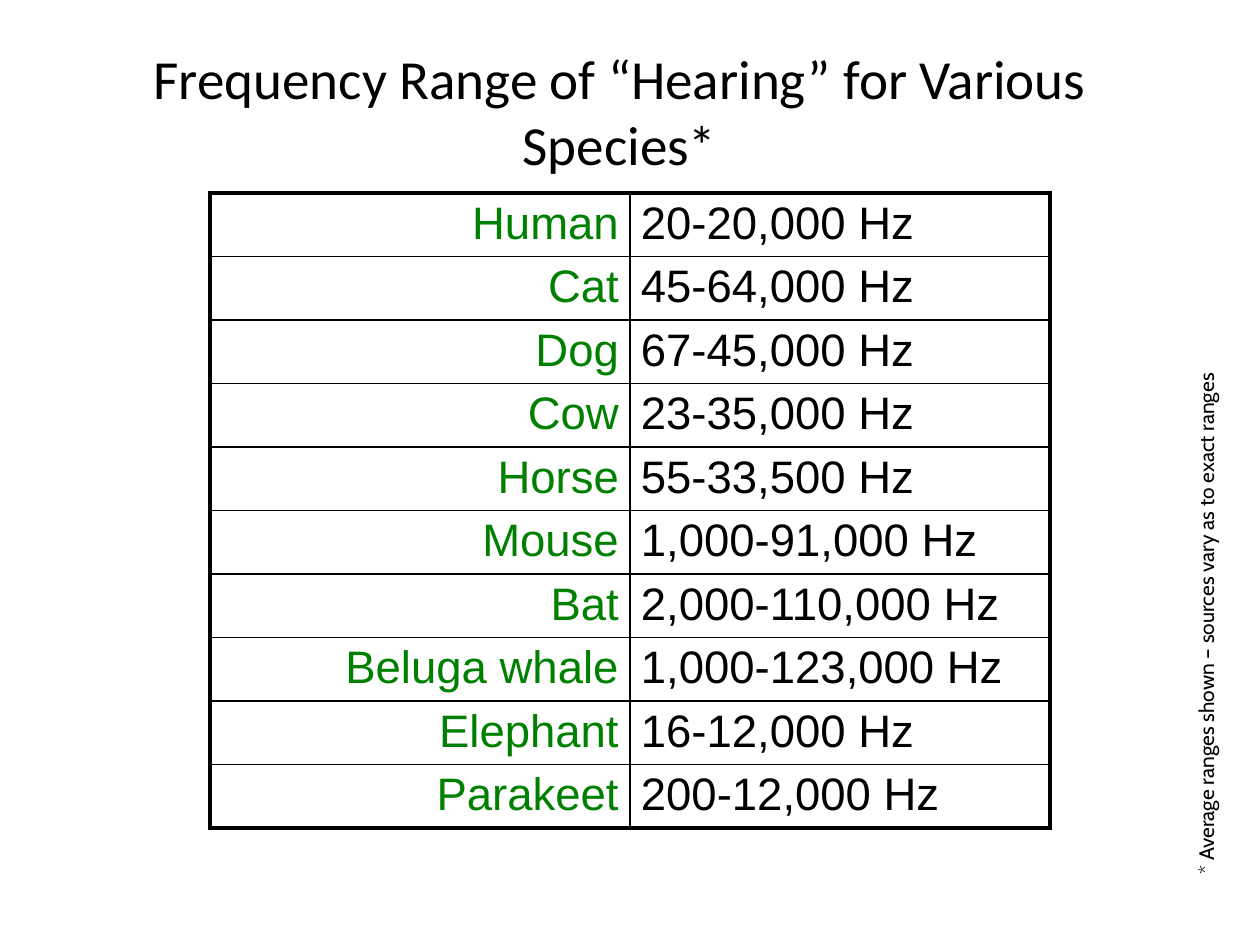
"""Builds a slide with a table of the hearing ranges of various species."""
from lxml import etree
from pptx import Presentation
from pptx import util as u
from pptx.dml.color import RGBColor
from pptx.enum import text
from pptx.oxml.ns import qn

EMU_PER_PX = 914400 // 126
BLACK = RGBColor(0x00, 0x00, 0x00)
GREEN = RGBColor(0x00, 0x80, 0x00)
THIN, THICK = 1, 2.25

HEARING_RANGES = [
    ("Human", "20-20,000 Hz"),
    ("Cat", "45-64,000 Hz"),
    ("Dog", "67-45,000 Hz"),
    ("Cow", "23-35,000 Hz"),
    ("Horse", "55-33,500 Hz"),
    ("Mouse", "1,000-91,000 Hz"),
    ("Bat", "2,000-110,000 Hz"),
    ("Beluga whale", "1,000-123,000 Hz"),
    ("Elephant", "16-12,000 Hz"),
    ("Parakeet", "200-12,000 Hz"),
]


def px(length):
    return u.Emu(length * EMU_PER_PX)


def write(frame, words, size, font, color=BLACK, align=text.PP_ALIGN.LEFT):
    paragraph = frame.paragraphs[0]
    paragraph.alignment = align
    run = paragraph.add_run()
    run.text = words
    run.font.size = u.Pt(size)
    run.font.name = font
    run.font.bold = False
    run.font.color.rgb = color


def add_border(cell, side, width):
    properties = cell._tc.get_or_add_tcPr()
    line = etree.SubElement(properties, qn(f"a:ln{side}"), w=str(u.Pt(width)))
    fill = etree.SubElement(line, qn("a:solidFill"))
    etree.SubElement(fill, qn("a:srgbClr"), val=str(BLACK))


def add_title(slide, words):
    title = slide.shapes.title
    title.left, title.top, title.width, title.height = map(px, (105, 32, 1029, 157))
    frame = title.text_frame
    frame.word_wrap = True
    frame.auto_size = text.MSO_AUTO_SIZE.NONE
    frame.vertical_anchor = text.MSO_ANCHOR.MIDDLE
    write(frame, words, 31.5, "Calibri", align=text.PP_ALIGN.CENTER)


def add_ranges_table(slide, ranges):
    last_row, last_column = len(ranges) - 1, 1
    table = slide.shapes.add_table(
        len(ranges), 2, px(210), px(193), px(840), px(635)).table
    table.first_row = table.horz_banding = False
    styles = [(GREEN, text.PP_ALIGN.RIGHT), (BLACK, text.PP_ALIGN.LEFT)]
    for row, values in enumerate(ranges):
        for column, (words, (color, align)) in enumerate(zip(values, styles)):
            cell = table.cell(row, column)
            cell.margin_left = cell.margin_right = px(11)
            cell.margin_top = cell.margin_bottom = px(5)
            write(cell.text_frame, words, 26, "Arial", color, align)
            outer = {"L": column == 0, "R": column == last_column,
                     "T": row == 0, "B": row == last_row}
            for side, is_outer in outer.items():
                add_border(cell, side, THICK if is_outer else THIN)
            cell.fill.background()


def add_vertical_note(slide, words):
    note = slide.shapes.add_textbox(px(1187), px(220), px(50), px(667))
    note.rotation = 180
    frame = note.text_frame
    frame.word_wrap = True
    frame._txBody.bodyPr.set("vert", "eaVert")
    write(frame, words, 12, "Cabin")


def main():
    presentation = Presentation()
    presentation.slide_width = u.Inches(10)
    presentation.slide_height = u.Inches(7.5)
    slide = presentation.slides.add_slide(presentation.slide_layouts[5])
    add_title(slide, "Frequency Range of “Hearing” for Various Species*")
    add_ranges_table(slide, HEARING_RANGES)
    add_vertical_note(slide, "* Average ranges shown – sources vary as to exact ranges")
    presentation.save("out.pptx")


if __name__ == "__main__":
    main()
